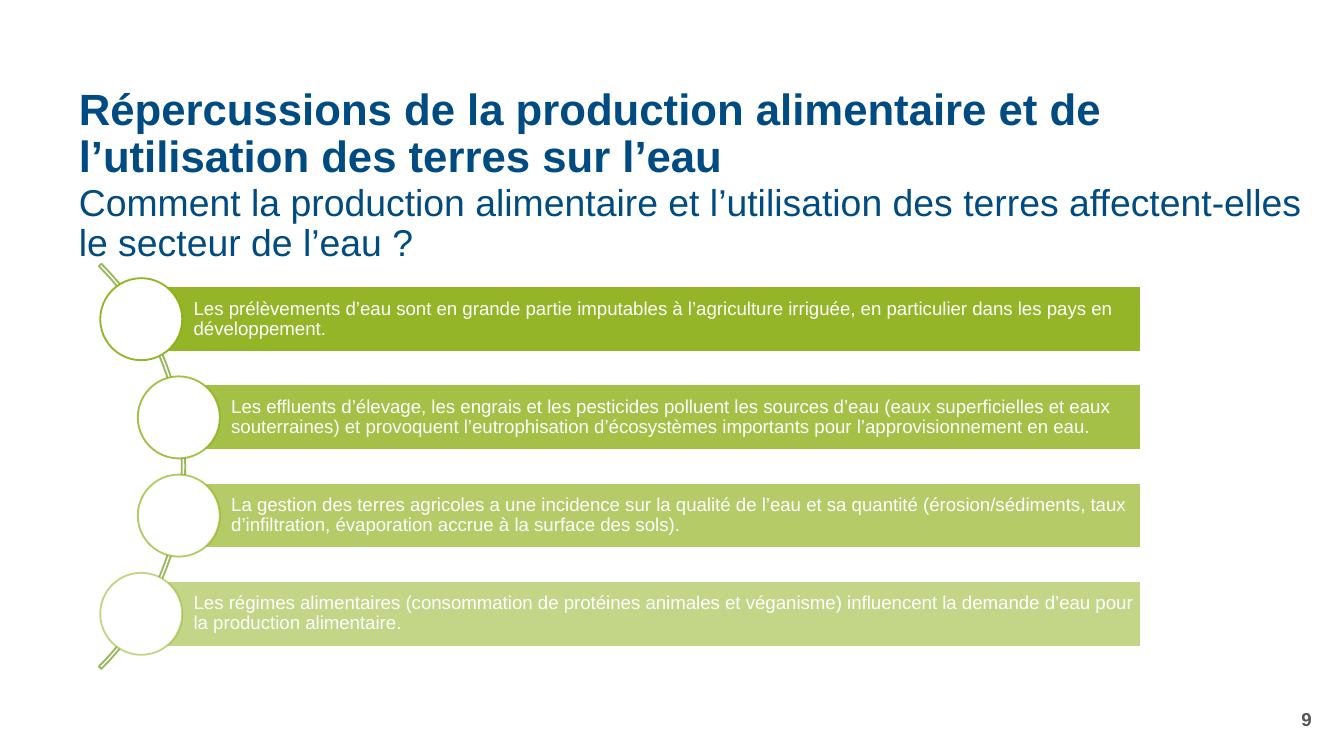
from lxml import etree
from pptx import Presentation
from pptx import util as u
from pptx.dml.color import RGBColor
from pptx.enum import shapes, text
from pptx.oxml.ns import qn

# Content
TITLE = "Répercussions de la production alimentaire et de l’utilisation des terres sur l’eau"
SUBTITLE = ("Comment la production alimentaire et l’utilisation des terres "
            "affectent-elles le secteur de l’eau ?")
PAGE_NUMBER = "9"
# Message, bar left edge (cm), opacity (%)
IMPACTS = [
    ("Les prélèvements d’eau sont en grande partie imputables à l’agriculture irriguée, "
     "en particulier dans les pays en développement.", 2.67, 90),
    ("Les effluents d’élevage, les engrais et les pesticides polluent les sources d’eau "
     "(eaux superficielles et eaux souterraines) et provoquent l’eutrophisation "
     "d’écosystèmes importants pour l’approvisionnement en eau.", 3.38, 77),
    ("La gestion des terres agricoles a une incidence sur la qualité de l’eau et sa quantité "
     "(érosion/sédiments, taux d’infiltration, évaporation accrue à la surface des sols).",
     3.38, 63),
    ("Les régimes alimentaires (consommation de protéines animales et véganisme) influencent "
     "la demande d’eau pour la production alimentaire.", 2.67, 50),
]

# Colours and layout (cm)
BLUE, GREEN, ARC_GREEN, GREY, WHITE = "004C82", "89AE10", "9AB85E", "575756", "FFFFFF"
BAR_TOP, BAR_PITCH, BAR_HEIGHT, BAR_RIGHT = 5.41, 1.855, 1.24, 21.56
CIRCLE = 1.55


def paint(colour_format, colour, opacity=100):
    colour_format.solid()
    colour_format.fore_color.rgb = RGBColor.from_string(colour)
    if opacity < 100:
        node = colour_format._xPr.find(".//" + qn("a:solidFill"))[0]
        etree.SubElement(node, qn("a:alpha"), val=str(opacity * 1000))


def write(shape, words, size, colour, insets, bold=False, spacing=0.9,
          anchor=text.MSO_ANCHOR.MIDDLE, align=text.PP_ALIGN.LEFT):
    frame = shape.text_frame
    frame.word_wrap = True
    frame.vertical_anchor = anchor
    (frame.margin_left, frame.margin_top,
     frame.margin_right, frame.margin_bottom) = [u.Cm(inset) for inset in insets]
    frame.text = words
    para = frame.paragraphs[0]
    para.alignment = align
    para.line_spacing = spacing
    font = para.runs[0].font
    font.name, font.size, font.bold = "Arial", u.Pt(size), bold
    font.color.rgb = RGBColor.from_string(colour)


def add_box(page, left, top, width, height):
    return page.shapes.add_textbox(u.Cm(left), u.Cm(top), u.Cm(width), u.Cm(height))


def add_outlined(page, kind, left, top, width, height, line, opacity=100):
    shape = page.shapes.add_shape(kind, u.Cm(left), u.Cm(top), u.Cm(width), u.Cm(height))
    shape.shadow.inherit = False
    shape.line.width = u.Pt(1)
    paint(shape.line.fill, line, opacity)
    return shape


deck = Presentation()
deck.slide_width, deck.slide_height = u.Cm(25.4), u.Cm(14.28)
page = deck.slides.add_slide(deck.slide_layouts[6])
kinds = shapes.MSO_SHAPE

# Headings
write(add_box(page, 1.24, 3.48, 23.8, 0.94), SUBTITLE, 20, BLUE,
      (0.25, 0, 0.2, 0), anchor=text.MSO_ANCHOR.TOP)
write(add_box(page, 1.24, 1.8, 23.8, 1.5), TITLE, 23.4, BLUE,
      (0.25, 0.13, 0.25, 0.13), bold=True)

# Arc linking the circles
arc = add_outlined(page, kinds.BLOCK_ARC, -7.32, 3.4, 10.82, 10.82, ARC_GREEN)
arc.fill.background()
for index, value in enumerate((189, 27, 0.006)):
    arc.adjustments[index] = value

# Bars, each with a circle centred on its left edge
for index, (message, left, opacity) in enumerate(IMPACTS):
    top = BAR_TOP + index * BAR_PITCH
    bar = add_outlined(page, kinds.RECTANGLE, left, top, BAR_RIGHT - left, BAR_HEIGHT, WHITE)
    paint(bar.fill, GREEN, opacity)
    write(bar, message, 10, WHITE, (0.99, 0.08, 0.08, 0.08))
    circle = add_outlined(page, kinds.OVAL, left - CIRCLE / 2,
                          top + (BAR_HEIGHT - CIRCLE) / 2, CIRCLE, CIRCLE, GREEN, opacity)
    paint(circle.fill, WHITE)

# Page number
write(add_box(page, 19.33, 13.21, 5.71, 0.76), PAGE_NUMBER, 10, GREY,
      (0.25, 0.13, 0.25, 0.13), bold=True, spacing=1.0, align=text.PP_ALIGN.RIGHT)

deck.save("out.pptx")
